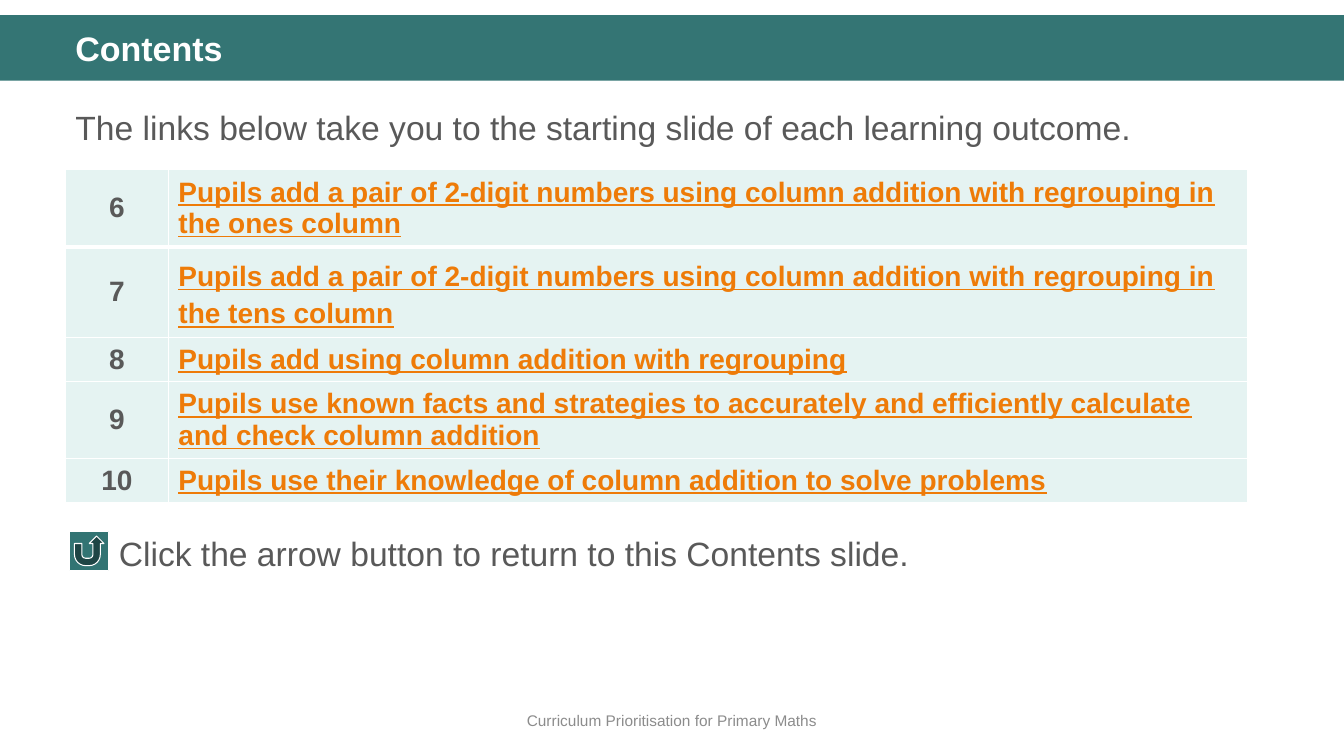
from lxml import etree
from pptx import Presentation
from pptx.dml.color import RGBColor
from pptx.enum import shapes, text
from pptx.oxml import ns
from pptx import util as u

TEAL = RGBColor(0x34, 0x75, 0x74)
BUTTON_TEAL = RGBColor(0x32, 0x74, 0x73)
PALE = RGBColor(0xE5, 0xF3, 0xF2)
ORANGE = RGBColor(0xEE, 0x7B, 0x08)
GREY = RGBColor(0x59, 0x59, 0x59)
LIGHT_GREY = RGBColor(0x8C, 0x8C, 0x8C)
WHITE = RGBColor(0xFF, 0xFF, 0xFF)

OUTCOMES = [
    ("6", "Pupils add a pair of 2-digit numbers using column addition with regrouping in the ones column", 1.0),
    ("7", "Pupils add a pair of 2-digit numbers using column addition with regrouping in the tens column", 1.2),
    ("8", "Pupils add using column addition with regrouping", 1.0),
    ("9", "Pupils use known facts and strategies to accurately and efficiently calculate and check column addition", 1.0),
    ("10", "Pupils use their knowledge of column addition to solve problems", 1.0),
]


def px(n):
    return u.Emu(n * 9144)


class Deck:
    font = "Arial"

    def __init__(self, width, height):
        self.prs = Presentation()
        self.prs.slide_width, self.prs.slide_height = px(width), px(height)
        self.s = self.prs.slides.add_slide(self.prs.slide_layouts[6])

    def add_words(self, tf, words, size, color, para=None, **font):
        p = tf.paragraphs[0]
        for name, value in (para or {}).items():
            setattr(p, name, value)
        r = p.add_run()
        r.text = words
        for name, value in {"name": self.font, "size": u.Pt(size), **font}.items():
            setattr(r.font, name, value)
        r.font.color.rgb = color

    def label(self, box, words, size, color, para=None, anchor=text.MSO_ANCHOR.TOP, **font):
        tf = self.s.shapes.add_textbox(*map(px, box)).text_frame
        tf.word_wrap = True
        tf.vertical_anchor = anchor
        self.add_words(tf, words, size, color, para, **font)

    def shape(self, kind, box, fill, line=None):
        sp = self.s.shapes.add_shape(kind, *map(px, box))
        sp.shadow.inherit = False
        sp.fill.solid()
        sp.fill.fore_color.rgb = fill
        if line is None:
            sp.line.fill.background()
        else:
            sp.line.color.rgb = line
            sp.line.width = u.Pt(0.75)

    def borders(self, cell, widths):
        tcPr = cell._tc.get_or_add_tcPr()
        for i, (side, width) in enumerate(widths.items()):
            ln = etree.Element(ns.qn("a:ln" + side), w=str(u.Pt(width)))
            fill = etree.SubElement(ln, ns.qn("a:solidFill"))
            etree.SubElement(fill, ns.qn("a:srgbClr"), val=str(WHITE))
            tcPr.insert(i, ln)

    def table(self, left, top, widths, row_height, rows):
        frame = self.s.shapes.add_table(
            len(rows), len(widths), px(left), px(top), px(sum(widths)), px(row_height * len(rows)))
        table = frame.table
        for column, width in zip(table.columns, widths):
            column.width = px(width)
        for i, (number, outcome, spacing) in enumerate(rows):
            table.rows[i].height = px(row_height)
            number_cell, outcome_cell = table.rows[i].cells
            for cell in (number_cell, outcome_cell):
                cell.fill.solid()
                cell.fill.fore_color.rgb = PALE
                cell.vertical_anchor = text.MSO_ANCHOR.MIDDLE
                self.borders(cell, {"L": 1, "R": 1, "T": 3 if i == 1 else 1, "B": 3 if i == 0 else 1})
            self.add_words(number_cell.text_frame, number, 20, GREY,
                           {"alignment": text.PP_ALIGN.CENTER}, bold=True)
            self.add_words(outcome_cell.text_frame, outcome, 20, ORANGE,
                           {"line_spacing": spacing}, bold=True, underline=True)


def main():
    deck = Deck(1333, 750)
    deck.shape(shapes.MSO_SHAPE.RECTANGLE, (0, 15, 1333, 65), TEAL)
    deck.label((65, 27, 1218, 47), "Contents", 24.3, WHITE, {"line_spacing": 0.9}, bold=True)
    deck.label((65, 93, 1218, 351),
               "The links below take you to the starting slide of each learning outcome.",
               24, GREY, {"line_spacing": 1.2})
    deck.table(65, 168, (102, 1070), 41, OUTCOMES)
    deck.shape(shapes.MSO_SHAPE.ACTION_BUTTON_RETURN, (69, 527, 39, 39), BUTTON_TEAL, WHITE)
    deck.label((108, 524, 1132, 50), "Click the arrow button to return to this Contents slide.", 24, GREY)
    deck.label((0, 695, 1333, 40), "Curriculum Prioritisation for Primary Maths", 11, LIGHT_GREY,
               {"alignment": text.PP_ALIGN.CENTER}, text.MSO_ANCHOR.MIDDLE)
    deck.prs.save("out.pptx")


if __name__ == "__main__":
    main()
